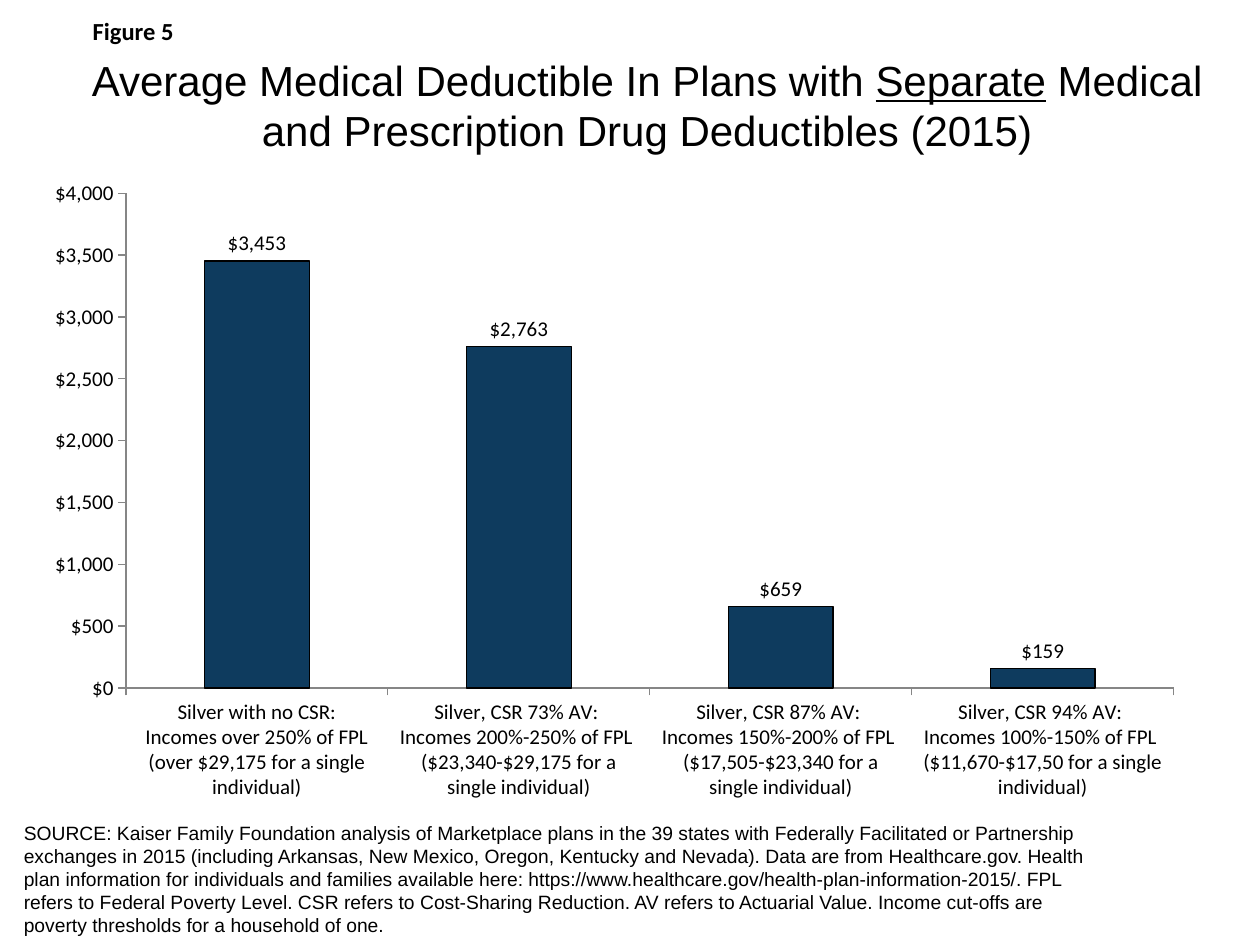
from dataclasses import dataclass

from lxml.etree import SubElement
from pptx import Presentation
from pptx.chart.data import CategoryChartData
from pptx.dml.color import RGBColor
from pptx.enum.chart import XL_CHART_TYPE, XL_LABEL_POSITION, XL_TICK_MARK
from pptx.enum.text import MSO_ANCHOR, PP_ALIGN
from pptx.oxml.ns import qn
from pptx.util import Cm, Pt


@dataclass(frozen=True)
class Theme:
    text: RGBColor = RGBColor(0x00, 0x00, 0x00)
    bar: RGBColor = RGBColor(0x0E, 0x3B, 0x5E)
    axis: RGBColor = RGBColor(0x86, 0x86, 0x86)
    body_font: str = "Arial"
    chart_font: str = "Calibri"
    title_size: Pt = Pt(24)
    figure_size: Pt = Pt(14)
    chart_size: Pt = Pt(12)
    source_size: Pt = Pt(11)


THEME = Theme()
DOLLARS = '"$"#,##0;[Red]"$"#,##0'

DEDUCTIBLES = {
    "Silver with no CSR:\nIncomes over 250% of FPL\n"
    "(over $29,175 for a single individual)": 3453,
    "Silver, CSR 73% AV: \nIncomes 200%-250% of FPL \n"
    "($23,340-$29,175 for a single individual)": 2763,
    "Silver, CSR 87% AV: \nIncomes 150%-200% of FPL \n"
    "($17,505-$23,340 for a single individual)": 659,
    "Silver, CSR 94% AV: \nIncomes 100%-150% of FPL \n"
    "($11,670-$17,50 for a single individual)": 159,
}

SOURCE = (
    "SOURCE: Kaiser Family Foundation analysis of Marketplace plans in the 39 states "
    "with Federally Facilitated or Partnership exchanges in 2015 (including Arkansas, "
    "New Mexico, Oregon, Kentucky and Nevada). Data are from Healthcare.gov. Health plan "
    "information for individuals and families available here: "
    "https://www.healthcare.gov/health-plan-information-2015/. FPL refers to Federal "
    "Poverty Level. CSR refers to Cost-Sharing Reduction. AV refers to Actuarial Value. "
    "Income cut-offs are poverty thresholds for a household of one."
)


def style_font(font, name, size):
    font.name = name
    font.size = size
    font.color.rgb = THEME.text


def add_text(slide, box, text, font_name, size, align=PP_ALIGN.LEFT,
             anchor=MSO_ANCHOR.TOP):
    """Add a wrapping one-paragraph text box and return its paragraph."""
    frame = slide.shapes.add_textbox(*map(Cm, box)).text_frame
    frame.word_wrap = True
    frame.vertical_anchor = anchor
    paragraph = frame.paragraphs[0]
    paragraph.alignment = align
    paragraph.add_run().text = text
    style_font(paragraph.font, font_name, size)
    return paragraph


def set_plot_area(chart, **fractions):
    """Fix the inner plot area as fractions of the chart's frame."""
    plot_area = chart.plots[0]._element.getparent()
    layout = plot_area.find(qn("c:layout"))
    if layout is None:
        layout = SubElement(plot_area, qn("c:layout"))
        plot_area.insert(0, layout)
    manual = SubElement(layout, qn("c:manualLayout"))
    settings = {"layoutTarget": "inner", "xMode": "edge", "yMode": "edge", **fractions}
    for tag, value in settings.items():
        SubElement(manual, qn(f"c:{tag}")).set("val", str(value))


def style_axis(axis):
    axis.has_major_gridlines = False
    axis.major_tick_mark = XL_TICK_MARK.OUTSIDE
    axis.minor_tick_mark = XL_TICK_MARK.NONE
    axis.format.line.color.rgb = THEME.axis
    axis.format.line.width = Pt(0.75)
    style_font(axis.tick_labels.font, THEME.chart_font, THEME.chart_size)


def add_deductible_chart(slide, box):
    data = CategoryChartData(number_format=DOLLARS)
    data.categories = list(DEDUCTIBLES)
    data.add_series("Series 1", list(DEDUCTIBLES.values()))
    chart = slide.shapes.add_chart(
        XL_CHART_TYPE.COLUMN_CLUSTERED, *map(Cm, box), data).chart
    chart.has_legend = False
    chart.has_title = False
    style_font(chart.font, THEME.chart_font, THEME.chart_size)
    set_plot_area(chart, x=0.08, y=0.04, w=0.9, h=0.77)

    # Axes
    for axis in (chart.category_axis, chart.value_axis):
        style_axis(axis)
    dollars = chart.value_axis
    dollars.minimum_scale, dollars.maximum_scale, dollars.major_unit = 0, 4000, 500
    dollars.tick_labels.number_format = DOLLARS
    dollars.tick_labels.number_format_is_linked = False

    # Columns and their labels
    plot = chart.plots[0]
    plot.gap_width = 150
    plot.vary_by_categories = False
    columns = plot.series[0]
    columns.format.fill.solid()
    columns.format.fill.fore_color.rgb = THEME.bar
    columns.format.line.color.rgb = THEME.text
    columns.format.line.width = Pt(0.75)
    labels = columns.data_labels
    labels.show_value = True
    labels.position = XL_LABEL_POSITION.OUTSIDE_END
    labels.number_format = DOLLARS
    labels.number_format_is_linked = False
    style_font(labels.font, THEME.chart_font, THEME.chart_size)


def main():
    presentation = Presentation()
    presentation.slide_width, presentation.slide_height = Cm(25.4), Cm(19.05)
    slide = presentation.slides.add_slide(presentation.slide_layouts[6])

    # Source note
    add_text(slide, (0.23, 16.43, 22.23, 2.62), SOURCE,
             THEME.body_font, THEME.source_size)

    # Chart
    add_deductible_chart(slide, (0.66, 3.38, 23.47, 12.95))

    # Title with one underlined word
    title = add_text(slide, (0.94, 0.84, 24.21, 2.54),
                     "Average Medical Deductible In Plans with ",
                     THEME.body_font, THEME.title_size,
                     PP_ALIGN.CENTER, MSO_ANCHOR.MIDDLE)
    separate = title.add_run()
    separate.text = "Separate"
    separate.font.underline = True
    title.add_run().text = " Medical and Prescription Drug Deductibles (2015)"

    # Figure number
    figure = add_text(slide, (0.46, 0.2, 4.45, 0.86), "Figure 5",
                      THEME.chart_font, THEME.figure_size, PP_ALIGN.CENTER)
    figure.font.bold = True

    presentation.save("out.pptx")


if __name__ == "__main__":
    main()
